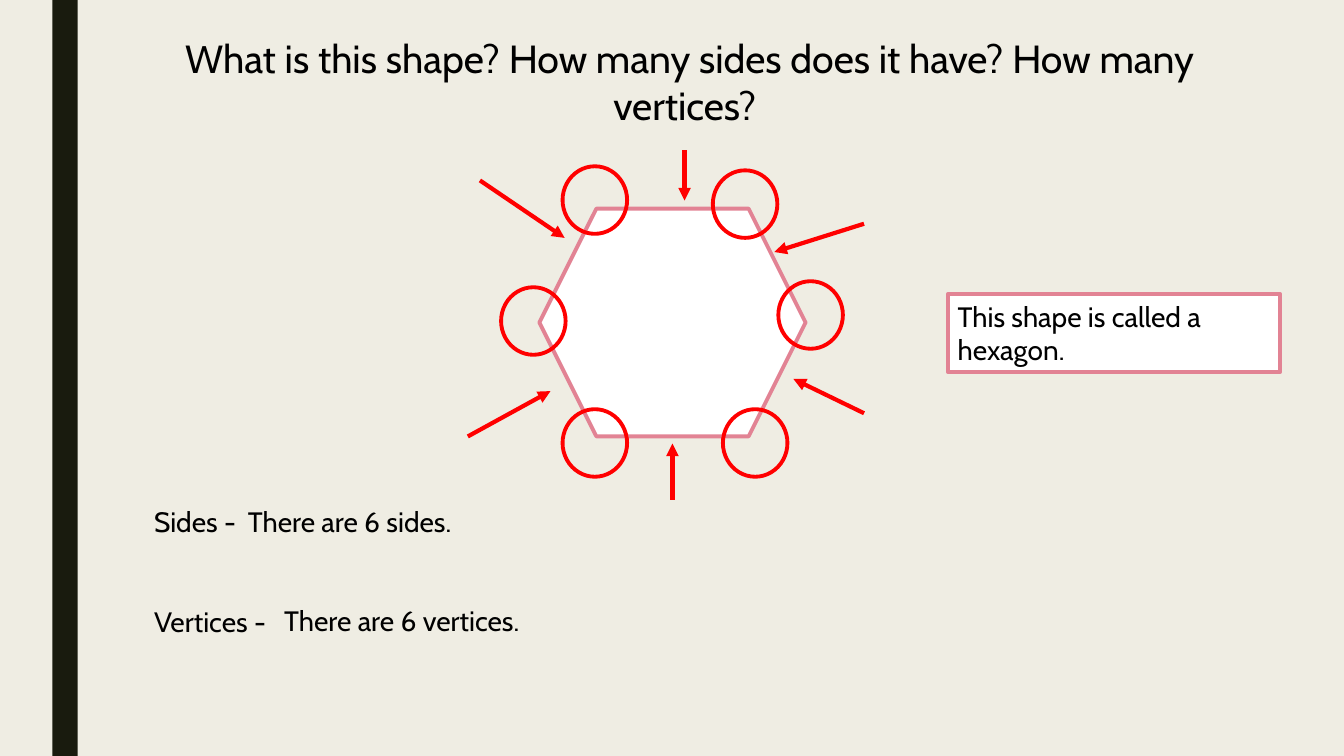
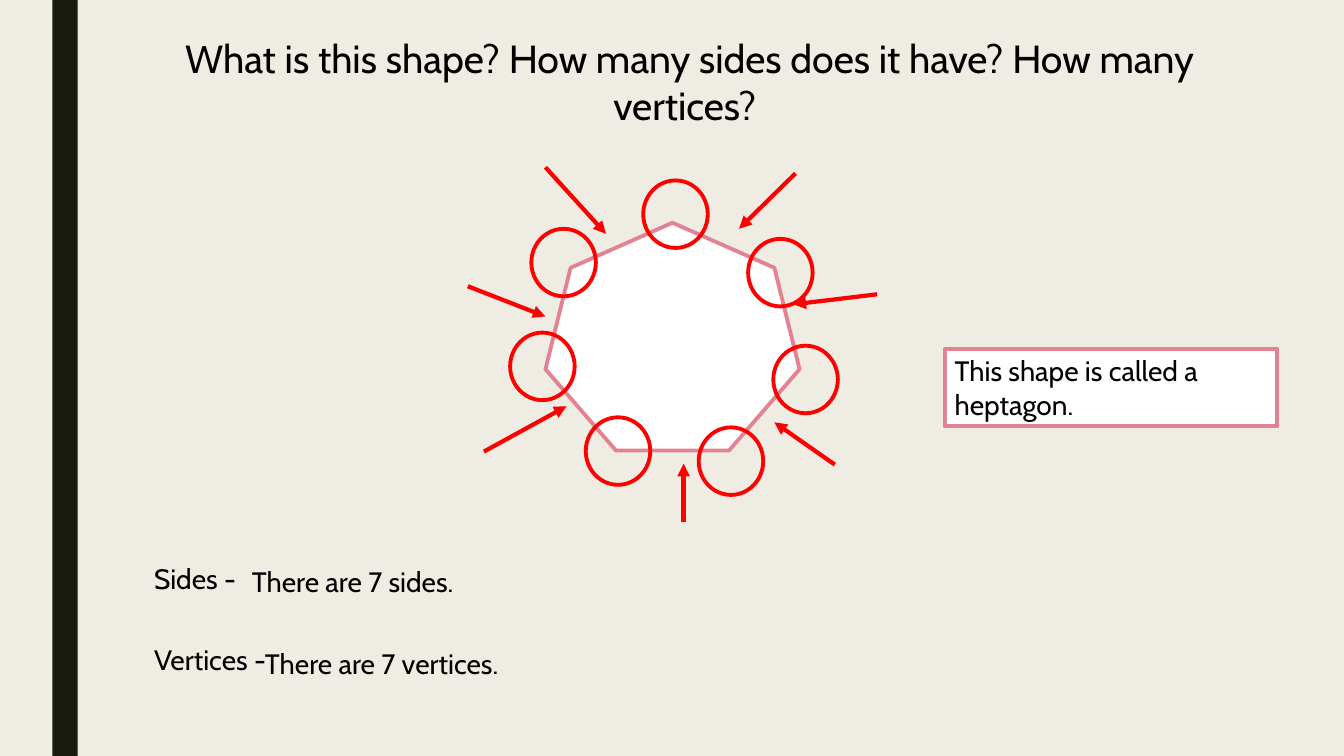
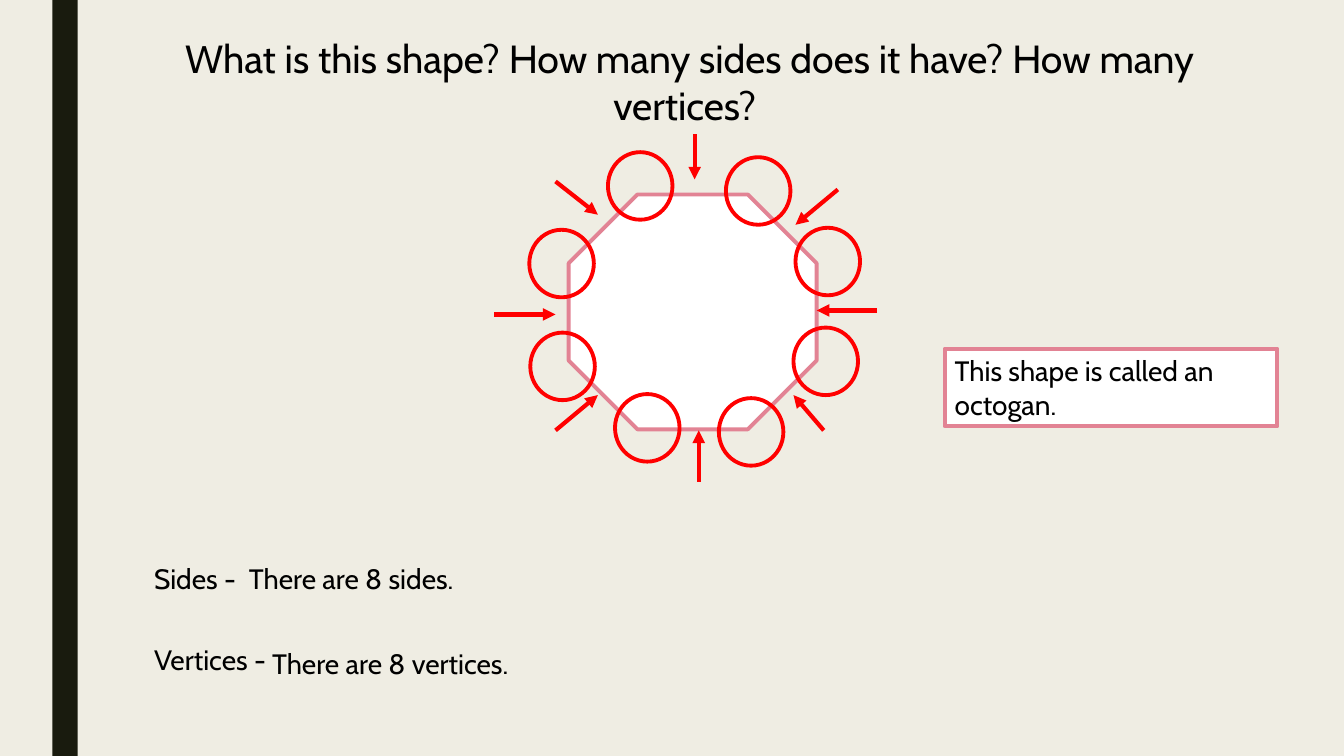
"""Builds three quiz slides about the sides and vertices of polygons."""
from dataclasses import dataclass

from lxml import etree
from pptx import Presentation
from pptx.dml.color import RGBColor
from pptx.enum.shapes import MSO_CONNECTOR, MSO_SHAPE
from pptx.enum.text import MSO_ANCHOR, MSO_AUTO_SIZE, PP_ALIGN
from pptx.oxml.ns import qn
from pptx.util import Inches, Pt

RECT, OVAL = MSO_SHAPE.RECTANGLE, MSO_SHAPE.OVAL
HEXAGON, HEPTAGON, OCTAGON = MSO_SHAPE.HEXAGON, MSO_SHAPE.HEPTAGON, MSO_SHAPE.OCTAGON
STRAIGHT = MSO_CONNECTOR.STRAIGHT
TOP, MIDDLE = MSO_ANCHOR.TOP, MSO_ANCHOR.MIDDLE
LEFT, CENTER = PP_ALIGN.LEFT, PP_ALIGN.CENTER
NO_AUTOSIZE = MSO_AUTO_SIZE.NONE

FONT = "Cabin"
CREAM, DARK, WHITE, BLACK = "EFEDE3", "191B0E", "FFFFFF", "000000"
PINK, RED = "E28394", "FF0000"
OUTLINE, ARROW_WIDTH = 2.75, 3
QUESTION = "What is this shape? How many sides does it have? How many vertices? "
LABEL_X, TEXT_HEIGHT = 1.43, 0.44
RING_WIDTH, RING_HEIGHT = 0.64, 0.67


@dataclass
class Polygon:
    """Content and placing of one quiz slide."""
    name: str
    count: int
    preset: int
    box: tuple
    name_at: tuple
    label_ys: tuple
    answers_at: tuple
    arrows: list
    rings: list


POLYGONS = [
    Polygon(
        "a hexagon", 6, HEXAGON, (5.35, 2.07, 2.64, 2.26), (9.4, 2.92),
        (4.96, 5.95), ((2.36, 4.96), (2.72, 5.94)),
        [(4.76, 1.79, 5.6, 2.36), (4.64, 4.33, 5.46, 3.88),
         (6.67, 4.96, 6.67, 4.4), (8.57, 4.1, 7.87, 3.76),
         (8.57, 2.22, 7.68, 2.5), (6.79, 1.49, 6.79, 1.99)],
        [(5.58, 1.65), (7.07, 1.69), (7.72, 2.79),
         (7.17, 4.06), (5.58, 4.06), (4.97, 2.85)]),
    Polygon(
        "a heptagon", 7, HEPTAGON, (5.41, 2.21, 2.52, 2.26), (9.37, 3.46),
        (5.52, 6.32), ((2.4, 5.55), (2.53, 6.36)),
        [(4.8, 4.48, 5.62, 4.03), (4.64, 2.84, 5.41, 3.14),
         (5.41, 1.66, 6.01, 2.32), (7.89, 1.72, 7.33, 2.27),
         (8.7, 2.92, 7.87, 3.02), (8.28, 4.61, 7.68, 4.19),
         (6.78, 5.18, 6.78, 4.6)],
        [(6.38, 1.79), (5.27, 2.27), (5.06, 3.3), (5.81, 4.14),
         (6.93, 4.24), (7.67, 3.43), (7.42, 2.37)]),
    Polygon(
        "an octogan", 8, OCTAGON, (5.64, 1.93, 2.46, 2.33), (9.37, 3.46),
        (5.52, 6.32), ((2.37, 5.52), (2.6, 6.36)),
        [(4.9, 3.12, 5.51, 3.12), (5.51, 1.8, 5.93, 2.13),
         (6.89, 1.33, 6.89, 1.78), (8.31, 1.88, 7.89, 2.23),
         (8.7, 3.08, 8.1, 3.08), (8.17, 4.27, 7.87, 3.92),
         (6.93, 4.78, 6.93, 4.27), (5.51, 4.27, 5.93, 3.92)],
        [(5.25, 2.28), (6.03, 1.51), (7.2, 1.56), (7.89, 2.26),
         (7.87, 3.25), (7.13, 3.95), (6.1, 3.91), (5.26, 3.3)]),
]


def rgb(color):
    """Turn a hex string into a colour."""
    return RGBColor.from_string(color)


def write(shape, text, size=20, align=LEFT, anchor=TOP):
    """Put one formatted paragraph into a shape."""
    tf = shape.text_frame
    tf.word_wrap = True
    tf.auto_size = NO_AUTOSIZE
    tf.vertical_anchor = anchor
    p = tf.paragraphs[0]
    p.text = text
    p.alignment = align
    p.font.name = FONT
    p.font.size = Pt(size)
    p.font.color.rgb = rgb(BLACK)


def add_text(s, x, y, width, text):
    """Add one line of text."""
    box = s.shapes.add_textbox(Inches(x), Inches(y), Inches(width), Inches(TEXT_HEIGHT))
    write(box, text)


def add_figure(s, preset, box, fill=None, line=None):
    """Add a preset shape with an optional fill and outline."""
    shape = s.shapes.add_shape(preset, *map(Inches, box))
    shape.shadow.inherit = False
    if fill:
        shape.fill.solid()
        shape.fill.fore_color.rgb = rgb(fill)
    else:
        shape.fill.background()
    if line:
        shape.line.color.rgb = rgb(line)
        shape.line.width = Pt(OUTLINE)
    else:
        shape.line.fill.background()
    return shape


def add_arrow(s, ends):
    """Add a red arrow that points at a side."""
    arrow = s.shapes.add_connector(STRAIGHT, *map(Inches, ends))
    arrow.line.color.rgb = rgb(RED)
    arrow.line.width = Pt(ARROW_WIDTH)
    properties = arrow.element.spPr
    line = properties.find(qn("a:ln"))
    etree.SubElement(line, qn("a:tailEnd")).set("type", "triangle")
    etree.SubElement(properties, qn("a:effectLst"))


def style_layout(prs, layout):
    """Set the background and the place of the title for all slides."""
    fill = prs.slide_master.background.fill
    fill.solid()
    fill.fore_color.rgb = rgb(CREAM)
    title, *footers = layout.placeholders
    title.left, title.top, title.width, title.height = map(Inches, (1.43, 0.29, 10.81, 1.04))
    for footer in footers:
        footer.element.getparent().remove(footer.element)


def add_band(s, layout):
    """Draw the dark band and move it to the layout."""
    band = add_figure(s, RECT, (0.52, 0, 0.25, 7.5), DARK)
    layout.shapes.element.append(band.element)


def fill_slide(s, polygon):
    """Add the question, the marked polygon and the answers."""
    write(s.shapes.title, QUESTION, 28, CENTER, MIDDLE)
    add_figure(s, polygon.preset, polygon.box, WHITE, PINK)
    for ends in polygon.arrows:
        add_arrow(s, ends)
    for x, y in polygon.rings:
        add_figure(s, OVAL, (x, y, RING_WIDTH, RING_HEIGHT), line=RED)
    rows = zip(("sides", "vertices"), polygon.label_ys, polygon.answers_at)
    for part, label_y, (x, y) in rows:
        add_text(s, LABEL_X, label_y, 1.55, f"{part.capitalize()} -")
        add_text(s, x, y, 4, f"There are {polygon.count} {part}.")
    name_box = add_figure(s, RECT, (*polygon.name_at, 3.3, 0.77), WHITE, PINK)
    write(name_box, f"This shape is called {polygon.name}.")


def main():
    """Build and save the presentation."""
    prs = Presentation()
    prs.slide_width, prs.slide_height = Inches(13.33), Inches(7.5)
    layout = prs.slide_layouts.get_by_name("Title Only")
    style_layout(prs, layout)
    slides = [prs.slides.add_slide(layout) for _ in POLYGONS]
    add_band(slides[0], layout)
    for s, polygon in zip(slides, POLYGONS):
        fill_slide(s, polygon)
    prs.save("out.pptx")


if __name__ == "__main__":
    main()
